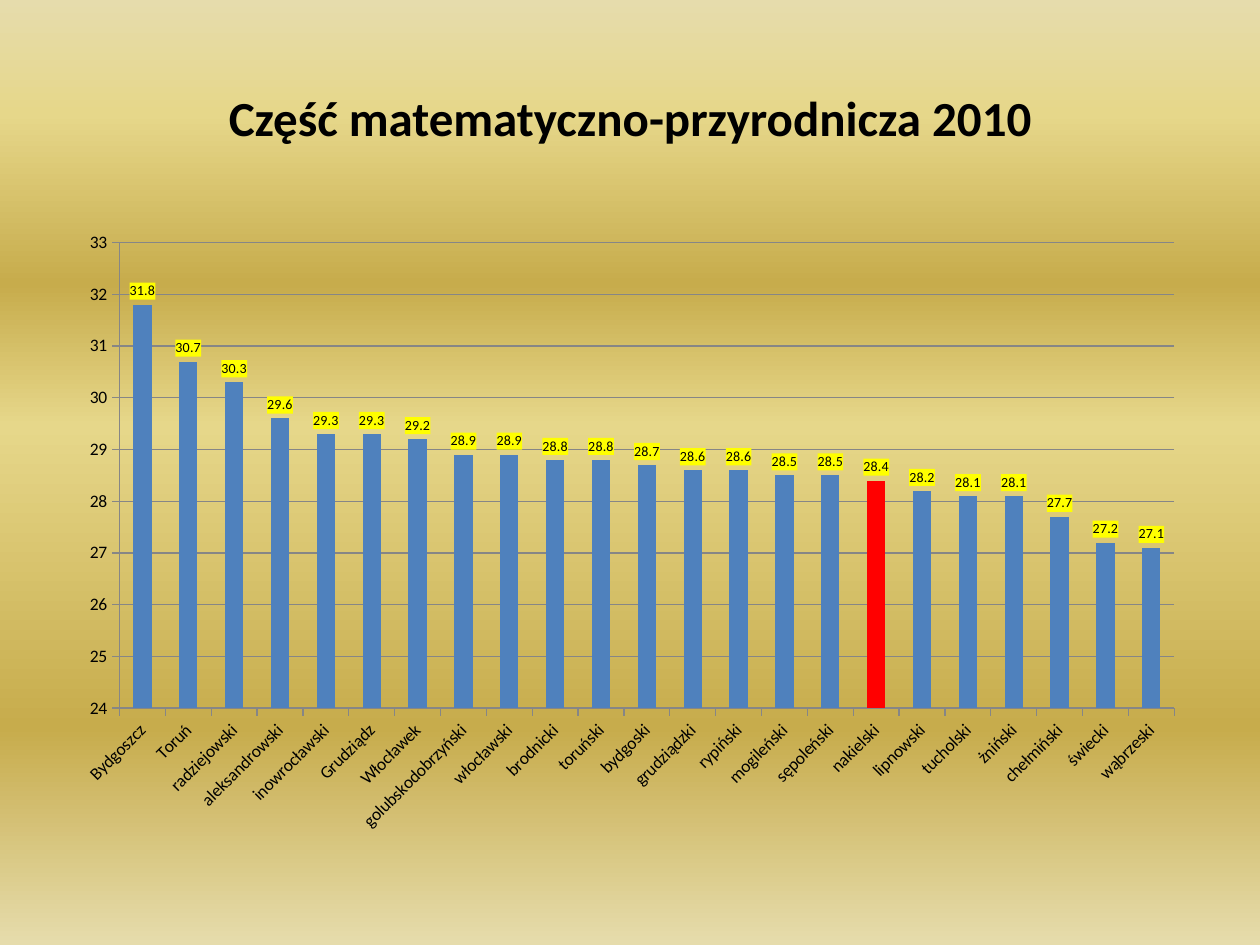
from lxml import etree
from pptx import Presentation
from pptx.chart.data import CategoryChartData
from pptx.dml.color import RGBColor
from pptx.enum.chart import XL_CHART_TYPE, XL_LABEL_POSITION, XL_TICK_MARK
from pptx.enum.text import MSO_ANCHOR, PP_ALIGN
from pptx.oxml import parse_xml
from pptx.oxml.ns import nsdecls, qn
from pptx.util import Cm, Pt

COLUMNS = XL_CHART_TYPE.COLUMN_CLUSTERED
OUTSIDE_END = XL_LABEL_POSITION.OUTSIDE_END
OUTSIDE = XL_TICK_MARK.OUTSIDE
NO_TICK = XL_TICK_MARK.NONE
MIDDLE = MSO_ANCHOR.MIDDLE
CENTER = PP_ALIGN.CENTER

FONT = "Calibri"
COLORS = {
    "text": "000000",
    "bar": "4F81BD",
    "highlight": "FF0000",
    "label": "FFFF00",
    "line": "868686",
    "pale": "E6DCAC",
    "light": "E6D78A",
    "gold": "C7AC4C",
}
BACKGROUND_STOPS = [(0, "pale"), (12, "light"), (30, "gold"),
                    (45, "light"), (77, "gold"), (100, "pale")]
HIGHLIGHTED = "nakielski"
RESULTS = {
    "Bydgoszcz": 31.8, "Toruń": 30.7, "radziejowski": 30.3,
    "aleksandrowski": 29.6, "inowrocławski": 29.3, "Grudziądz": 29.3,
    "Włocławek": 29.2, "golubskodobrzyński": 28.9, "włocławski": 28.9,
    "brodnicki": 28.8, "toruński": 28.8, "bydgoski": 28.7,
    "grudziądzki": 28.6, "rypiński": 28.6, "mogileński": 28.5,
    "sępoleński": 28.5, "nakielski": 28.4, "lipnowski": 28.2,
    "tucholski": 28.1, "żniński": 28.1, "chełmiński": 27.7,
    "świecki": 27.2, "wąbrzeski": 27.1,
}


def rgb(name):
    return RGBColor.from_string(COLORS[name])


def style_font(font, size, bold=False):
    font.name = FONT
    font.size = Pt(size)
    font.bold = bold
    font.color.rgb = rgb("text")


def paint_background(s):
    fill = s.background.fill
    fill.gradient()
    fill.gradient_angle = 270
    stops = next(s.background._cSld.iter(qn("a:gsLst")))
    for stop in list(stops):
        stops.remove(stop)
    for percent, name in BACKGROUND_STOPS:
        stop = etree.SubElement(stops, qn("a:gs"), pos=str(percent * 1000))
        etree.SubElement(stop, qn("a:srgbClr"), val=COLORS[name])


def add_title(s, text, left, top, width, height):
    tf = s.shapes.add_textbox(left, top, width, height).text_frame
    tf.word_wrap = True
    tf.vertical_anchor = MIDDLE
    p = tf.paragraphs[0]
    p.text = text
    p.alignment = CENTER
    style_font(p.runs[0].font, 28, bold=True)


def style_axes(chart):
    category, value = chart.category_axis, chart.value_axis
    value.minimum_scale, value.maximum_scale, value.major_unit = 24, 33, 1
    value.has_major_gridlines = True
    value.tick_labels.number_format = "0"
    value.tick_labels.number_format_is_linked = False
    for axis in (category, value):
        axis.major_tick_mark = OUTSIDE
        axis.minor_tick_mark = NO_TICK
    for line in (category.format.line, value.format.line,
                 value.major_gridlines.format.line):
        line.color.rgb = rgb("line")
        line.width = Pt(0.75)


def add_value_labels(plot):
    plot.has_data_labels = True
    labels = plot.data_labels
    labels.show_value = True
    labels.number_format = "0.0"
    labels.number_format_is_linked = False
    labels.position = OUTSIDE_END
    style_font(labels.font, 8)
    label_fill = parse_xml(
        f'<c:spPr {nsdecls("c", "a")}><a:solidFill>'
        f'<a:srgbClr val="{COLORS["label"]}"/></a:solidFill></c:spPr>')
    labels._element.find(qn("c:txPr")).addprevious(label_fill)


def add_results_chart(s, left, top, width, height):
    data = CategoryChartData(number_format="0.0")
    data.categories = list(RESULTS)
    data.add_series("Series 1", list(RESULTS.values()))
    chart = s.shapes.add_chart(COLUMNS, left, top, width, height, data).chart
    chart.has_title = False
    chart.has_legend = False
    style_font(chart.font, 10)
    style_axes(chart)

    plot = chart.plots[0]
    plot.vary_by_categories = False
    plot.gap_width = 150
    series = plot.series[0]
    point = series.points[list(RESULTS).index(HIGHLIGHTED)]
    for part, color in ((series, "bar"), (point, "highlight")):
        part.format.fill.solid()
        part.format.fill.fore_color.rgb = rgb(color)
    add_value_labels(plot)


def main():
    prs = Presentation()
    prs.slide_width, prs.slide_height = Cm(25.4), Cm(19.05)
    s = prs.slides.add_slide(prs.slide_layouts[6])
    margin = Cm(1.27)
    width = prs.slide_width - 2 * margin
    paint_background(s)
    add_title(s, "Część matematyczno-przyrodnicza 2010",
              margin, Cm(0.76), width, Cm(3.18))
    add_results_chart(s, margin, Cm(4.44), width, Cm(12.57))
    prs.save("out.pptx")


if __name__ == "__main__":
    main()
